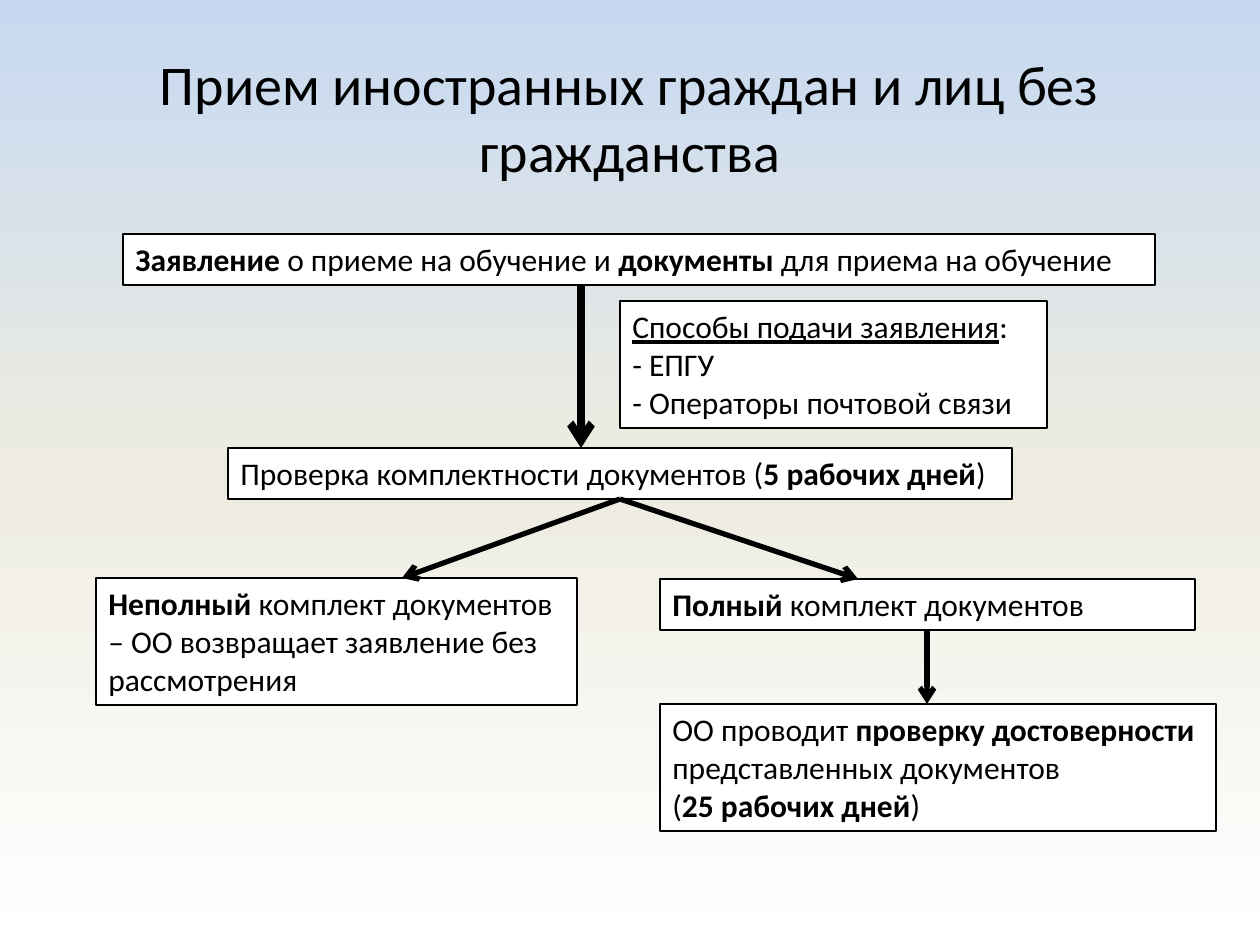
from lxml import etree
from pptx import Presentation
from pptx.dml.color import RGBColor
from pptx.enum.shapes import MSO_CONNECTOR, MSO_SHAPE
from pptx.enum.text import MSO_ANCHOR, MSO_AUTO_SIZE, PP_ALIGN
from pptx.oxml.ns import qn
from pptx.util import Pt

RECT = MSO_SHAPE.RECTANGLE
LINE = MSO_CONNECTOR.STRAIGHT
TOP, MIDDLE = MSO_ANCHOR.TOP, MSO_ANCHOR.MIDDLE
LEFT, CENTER = PP_ALIGN.LEFT, PP_ALIGN.CENTER
FIXED = MSO_AUTO_SIZE.NONE

FONT, BLACK, WHITE = "Calibri", "000000", "FFFFFF"
PX = 914400 / 126
ROW, PAD = 38, 13  # height of a text line, and of both insets

TITLE = "Прием иностранных граждан и лиц без гражданства"
STOPS = [(0, "C6D9F1"), (50, "EEECE1"), (100, "FFFFFF")]

# Each box: left, top, width, text lines, paragraphs of (text, style)
BOXES = {
    "apply": (123, 234, 1032, 1, [
        [("Заявление", "b"), (" о приеме на обучение и ", ""),
         ("документы", "b"), (" для приема на обучение", "")]]),
    "ways": (620, 301, 427, 3, [
        [("Способы подачи заявления", "u"), (":", "")],
        [("- ЕПГУ", "")],
        [("- Операторы почтовой связи", "")]]),
    "check": (228, 448, 784, 1, [
        [("Проверка комплектности документов (", ""),
         ("5 рабочих дней", "b"), (")", "")]]),
    "partial": (96, 578, 481, 3, [
        [("Неполный", "b"),
         (" комплект документов – ОО возвращает заявление без рассмотрения", "")]]),
    "full": (660, 579, 535, 1, [
        [("Полный", "b"), (" комплект документов", "")]]),
    "verify": (660, 704, 556, 3, [
        [("ОО проводит ", ""), ("проверку достоверности ", "b"),
         ("представленных документов", "")],
        [("(", ""), ("25 рабочих дней", "b"), (")", "")]]),
}

# Each arrow: from box, to box, start x, end x, width in points
ARROWS = [
    ("apply", "check", 581, 581, 4.5),
    ("check", "partial", 620, 402, 3),
    ("check", "full", 620, 858, 3),
    ("full", "verify", 927, 927, 3),
]


def px(*nums):
    return [round(n * PX) for n in nums]


def color(code):
    return RGBColor.from_string(code)


def add_run(para, text, size, style=""):
    run = para.add_run()
    run.text = text
    font = run.font
    font.name, font.size = FONT, Pt(size)
    font.bold, font.underline = "b" in style, "u" in style
    font.color.rgb = color(BLACK)


def add_back(slide):
    fill = slide.background.fill
    fill.gradient()
    fill.gradient_angle = 270
    stops = slide.background._cSld.find(".//" + qn("a:gsLst"))
    for old in list(stops):
        stops.remove(old)
    for place, code in STOPS:
        stop = etree.SubElement(stops, qn("a:gs"), pos=str(place * 1000))
        etree.SubElement(stop, qn("a:srgbClr"), val=code)


def add_title(slide):
    title = slide.shapes.title
    title.left, title.top, title.width, title.height = px(63, 38, 1134, 157)
    frame = title.text_frame
    frame.auto_size, frame.vertical_anchor = FIXED, MIDDLE
    para = frame.paragraphs[0]
    para.alignment = CENTER
    add_run(para, TITLE, 32)


def add_box(slide, left, top, width, rows, paras):
    box = slide.shapes.add_shape(RECT, *px(left, top, width, rows * ROW + PAD))
    box.shadow.inherit = False
    box.fill.solid()
    box.fill.fore_color.rgb = color(WHITE)
    box.line.color.rgb = color(BLACK)
    box.line.width = Pt(0.75)
    frame = box.text_frame
    frame.word_wrap, frame.vertical_anchor = True, TOP
    for i, runs in enumerate(paras):
        para = frame.add_paragraph() if i else frame.paragraphs[0]
        para.alignment = LEFT
        for text, style in runs:
            add_run(para, text, 18, style)


def add_arrow(slide, start, end, x1, x2, width):
    top, rows = BOXES[start][1], BOXES[start][3]
    y1, y2 = top + rows * ROW + PAD, BOXES[end][1]
    arrow = slide.shapes.add_connector(LINE, *px(x1, y1, x2, y2))
    arrow.line.color.rgb = color(BLACK)
    arrow.line.width = Pt(width)
    etree.SubElement(arrow.line._get_or_add_ln(), qn("a:tailEnd"), type="arrow")
    etree.SubElement(arrow._element.spPr, qn("a:effectLst"))


def main():
    deck = Presentation()
    deck.slide_width, deck.slide_height = px(1260, 945)
    slide = deck.slides.add_slide(deck.slide_layouts[5])
    add_back(slide)
    add_title(slide)
    for box in BOXES.values():
        add_box(slide, *box)
    for arrow in ARROWS:
        add_arrow(slide, *arrow)
    deck.save("out.pptx")


if __name__ == "__main__":
    main()
